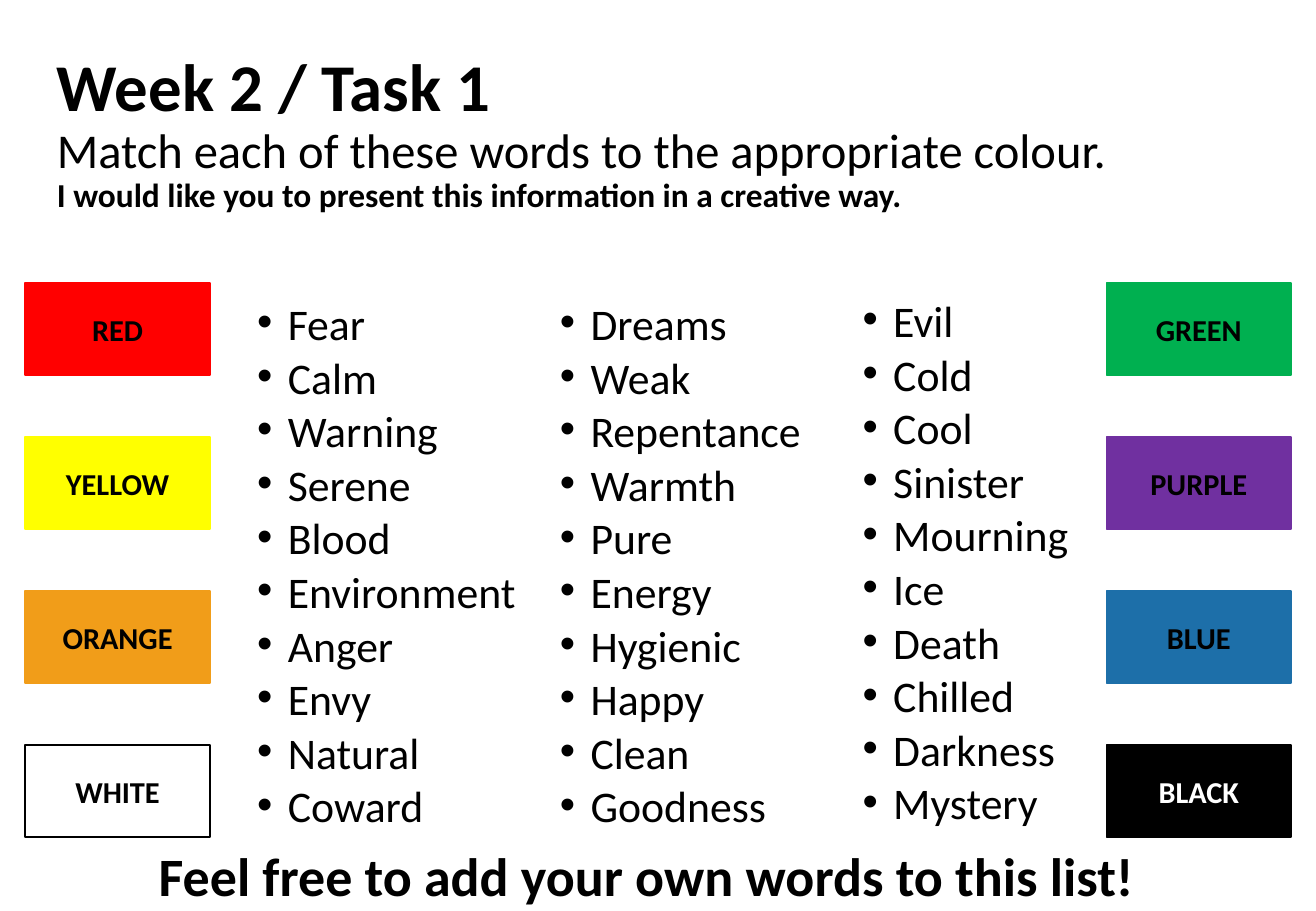
import pptx
import pptx.util
import pptx.dml.color
import pptx.enum.shapes
import pptx.enum.text
import lxml.etree

Cm, Pt = pptx.util.Cm, pptx.util.Pt
Anchor, Align = pptx.enum.text.MSO_ANCHOR, pptx.enum.text.PP_ALIGN

# Text, size key, bold
TITLE = [
    ("Week 2 / Task 1 ", "head", True),
    ("Match each of these words to the appropriate colour.", "lead", False),
    ("I would like you to present this information in a creative way.", "note", True),
]
# Top of the list in cm, words
LISTS = [
    (6.38, ["Fear", "Calm", "Warning", "Serene", "Blood", "Environment",
            "Anger", "Envy", "Natural", "Coward"]),
    (6.38, ["Dreams", "Weak", "Repentance", "Warmth", "Pure", "Energy",
            "Hygienic", "Happy", "Clean", "Goodness"]),
    (6.32, ["Evil", "Cold", "Cool", "Sinister", "Mourning", "Ice",
            "Death", "Chilled", "Darkness", "Mystery"]),
]
# Left of the stack in cm, colour names
STACKS = [
    (0.53, ["RED", "YELLOW", "ORANGE", "WHITE"]),
    (23.14, ["GREEN", "PURPLE", "BLUE", "BLACK"]),
]
FOOTER = "Feel free to add your own words to this list!"

THEME = {
    "font": "Calibri",
    "ink": "000000",
    "paper": "FFFFFF",
    "size": {"head": 39.6, "lead": 28.8, "note": 19.8,
             "word": 25.9, "label": 18, "foot": 32},
    "fill": {"RED": "FF0000", "YELLOW": "FFFF00", "ORANGE": "F19D19",
             "WHITE": None, "GREEN": "00B050", "PURPLE": "7030A0",
             "BLUE": "1D6FA9", "BLACK": "000000"},
}


def rgb(code):
    return pptx.dml.color.RGBColor.from_string(code)


def style(run, size, bold=False, ink=THEME["ink"]):
    font = run.font
    font.name = THEME["font"]
    font.size = Pt(THEME["size"][size])
    font.bold = bold
    font.color.rgb = rgb(ink)


def add_text(slide, left, top, width, height, text, wrap=True):
    box = slide.shapes.add_textbox(Cm(left), Cm(top), Cm(width), Cm(height))
    frame = box.text_frame
    frame.word_wrap = wrap
    frame.text = text
    return frame


def add_bullet(para):
    props = para._p.get_or_add_pPr()
    props.set("marL", str(Cm(0.64)))
    props.set("indent", str(-Cm(0.64)))
    for tag, key, value in (("buFont", "typeface", "Arial"),
                            ("buChar", "char", "•")):
        name = lxml.etree.QName(props.nsmap["a"], tag)
        lxml.etree.SubElement(props, name).set(key, value)


def add_title(slide):
    text = "\v".join(line for line, _, _ in TITLE)
    frame = add_text(slide, 0.94, 0.97, 26.04, 3.68, text)
    frame.vertical_anchor = Anchor.MIDDLE
    para = frame.paragraphs[0]
    para.line_spacing = 0.9
    for run, (_, size, bold) in zip(para.runs, TITLE):
        style(run, size, bold)


def add_list(slide, left, top, words):
    frame = add_text(slide, left, top, 6.93, 12.09, "\n".join(words))
    for para in frame.paragraphs:
        para.line_spacing = 0.7
        para.space_before = Pt(10)
        add_bullet(para)
        style(para.runs[0], "word")


def add_swatch(slide, left, top, name):
    box = slide.shapes.add_shape(pptx.enum.shapes.MSO_SHAPE.RECTANGLE,
                                 Cm(left), Cm(top), Cm(3.86), Cm(1.93))
    box.shadow.inherit = False
    code = THEME["fill"][name]
    if code:
        box.fill.solid()
        box.fill.fore_color.rgb = rgb(code)
    else:
        box.fill.background()
    box.line.color.rgb = rgb(code or THEME["ink"])
    box.line.width = Pt(1)
    frame = box.text_frame
    frame.text = name
    frame.vertical_anchor = Anchor.MIDDLE
    para = frame.paragraphs[0]
    para.alignment = Align.CENTER
    ink = THEME["paper"] if code == THEME["ink"] else THEME["ink"]
    style(para.runs[0], "label", True, ink)


def main():
    deck = pptx.Presentation()
    deck.slide_width, deck.slide_height = Cm(27.52), Cm(19.05)
    slide = deck.slides.add_slide(deck.slide_layouts[6])

    for col, (top, words) in enumerate(LISTS):
        add_list(slide, 5.13 + 6.33 * col, top, words)
    add_title(slide)
    for left, names in STACKS:
        for row, name in enumerate(names):
            add_swatch(slide, left, 5.92 + 3.22 * row, name)
    frame = add_text(slide, 3.07, 17.5, 21.11, 1.63, FOOTER, wrap=False)
    style(frame.paragraphs[0].runs[0], "foot", True)

    deck.save("out.pptx")


if __name__ == "__main__":
    main()
